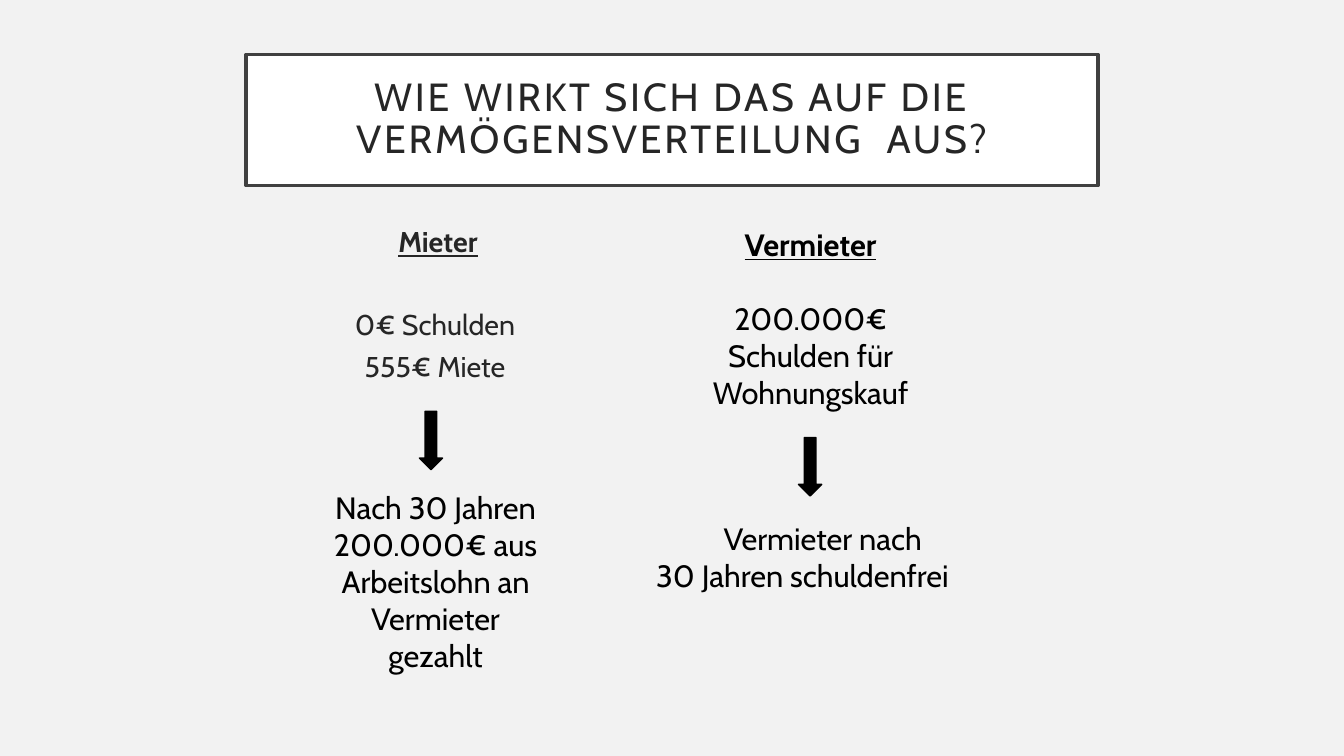
import pptx
import pptx.util
import pptx.dml.color
import pptx.enum.shapes
import pptx.enum.text
import pptx.oxml

Inches, Pt = pptx.util.Inches, pptx.util.Pt
ALIGN = pptx.enum.text.PP_ALIGN
ANCHOR = pptx.enum.text.MSO_ANCHOR

THEME = {
    "font": "Cabin", "back": "F2F2F2", "panel": "FFFFFF", "frame": "404040",
    "soft": "262626", "dark": "000000",
    "title": 28, "body": 20.4, "text": 22,
}
HEAD = {"bold": True, "underline": True}
PLAIN = {"bold": False, "underline": False}
MID = {"alignment": ALIGN.CENTER}

# Each line: text, font values, paragraph values, left indent in inches
TITLE = [("WIE WIRKT SICH DAS AUF DIE VERMÖGENSVERTEILUNG  AUS?", PLAIN,
          {**MID, "line_spacing": 0.9}, 0)]
TIGHT = {**MID, "line_spacing": 0.8, "space_before": Pt(10)}
TENANT = [
    ("Mieter", HEAD, TIGHT, 0.06),
    ("0€ Schulden", PLAIN, {**TIGHT, "space_before": Pt(39.6)}, 0),
    ("555€ Miete", PLAIN, TIGHT, 0),
]
NOTES = [
    ((3.09, 4.8, 2.46, 1.58), [
        ("Nach 30 Jahren", PLAIN, MID, 0),
        ("200.000€ aus Arbeitslohn an Vermieter gezahlt", PLAIN, MID, 0),
    ]),
    ((6.79, 2.19, 2.5, 1.95), [
        ("Vermieter", HEAD, MID, 0),
        ("200.000€ Schulden für Wohnungskauf", PLAIN,
         {**MID, "space_before": Pt(26.4)}, 0),
    ]),
    ((6.34, 5.11, 3.64, 0.84), [
        ("Vermieter nach", PLAIN, MID, 0),
        ("30 Jahren schuldenfrei", PLAIN, {"alignment": ALIGN.LEFT}, 0.07),
    ]),
]
ARROWS = [(4.16, 4.08), (7.92, 4.34)]
ARROW_SIZE = (0.23, 0.58)


def color(name):
    return pptx.dml.color.RGBColor.from_string(THEME[name])


def apply(target, values):
    for name, value in values.items():
        setattr(target, name, value)


def place(shape, box):
    apply(shape, dict(zip(("left", "top", "width", "height"), map(Inches, box))))


def paint(shape, fill, line, width):
    shape.fill.solid()
    shape.fill.fore_color.rgb = color(fill)
    shape.line.color.rgb = color(line)
    shape.line.width = Pt(width)


def write(shape, lines, size, ink, anchor=ANCHOR.TOP):
    frame = shape.text_frame
    apply(frame, {"word_wrap": True, "vertical_anchor": anchor,
                  "auto_size": pptx.enum.text.MSO_AUTO_SIZE.NONE})
    for i, (text, face, layout, indent) in enumerate(lines):
        para = frame.paragraphs[0] if i == 0 else frame.add_paragraph()
        apply(para, layout)
        props = para._p.get_or_add_pPr()
        props.set("marL", str(Inches(indent)))
        props.set("indent", "0")
        pptx.oxml.xmlchemy.OxmlElement
        props.append(pptx.oxml.parse_xml(
            '<a:buNone xmlns:a="http://schemas.openxmlformats.org/drawingml/2006/main"/>'))
        run = para.add_run()
        run.text = text
        apply(run.font, {"name": THEME["font"], "size": Pt(THEME[size]), **face})
        run.font.color.rgb = color(ink)


def main():
    deck = pptx.Presentation()
    apply(deck, {"slide_width": Inches(13.33), "slide_height": Inches(7.5)})
    slide = deck.slides.add_slide(deck.slide_layouts[1])
    slide.background.fill.solid()
    slide.background.fill.fore_color.rgb = color("back")

    title, body = slide.shapes.title, slide.placeholders[1]
    place(title, (2.44, 0.54, 8.45, 1.3))
    paint(title, "panel", "frame", 2.5)
    sides = ("left", "right", "top", "bottom")
    apply(title.text_frame, {f"margin_{side}": Inches(0.2) for side in sides})
    write(title, TITLE, "title", "soft", ANCHOR.MIDDLE)
    title.text_frame.paragraphs[0].runs[0].font._element.set("spc", "200")

    place(body, (3.41, 2.24, 1.81, 1.7))
    write(body, TENANT, "body", "soft")

    for box, lines in NOTES:
        note = slide.shapes.add_textbox(*map(Inches, box))
        write(note, lines, "text", "dark")

    for spot in ARROWS:
        arrow = slide.shapes.add_shape(
            pptx.enum.shapes.MSO_SHAPE.DOWN_ARROW, *map(Inches, spot + ARROW_SIZE))
        arrow.shadow.inherit = False
        paint(arrow, "dark", "dark", 1)

    deck.save("out.pptx")


if __name__ == "__main__":
    main()
